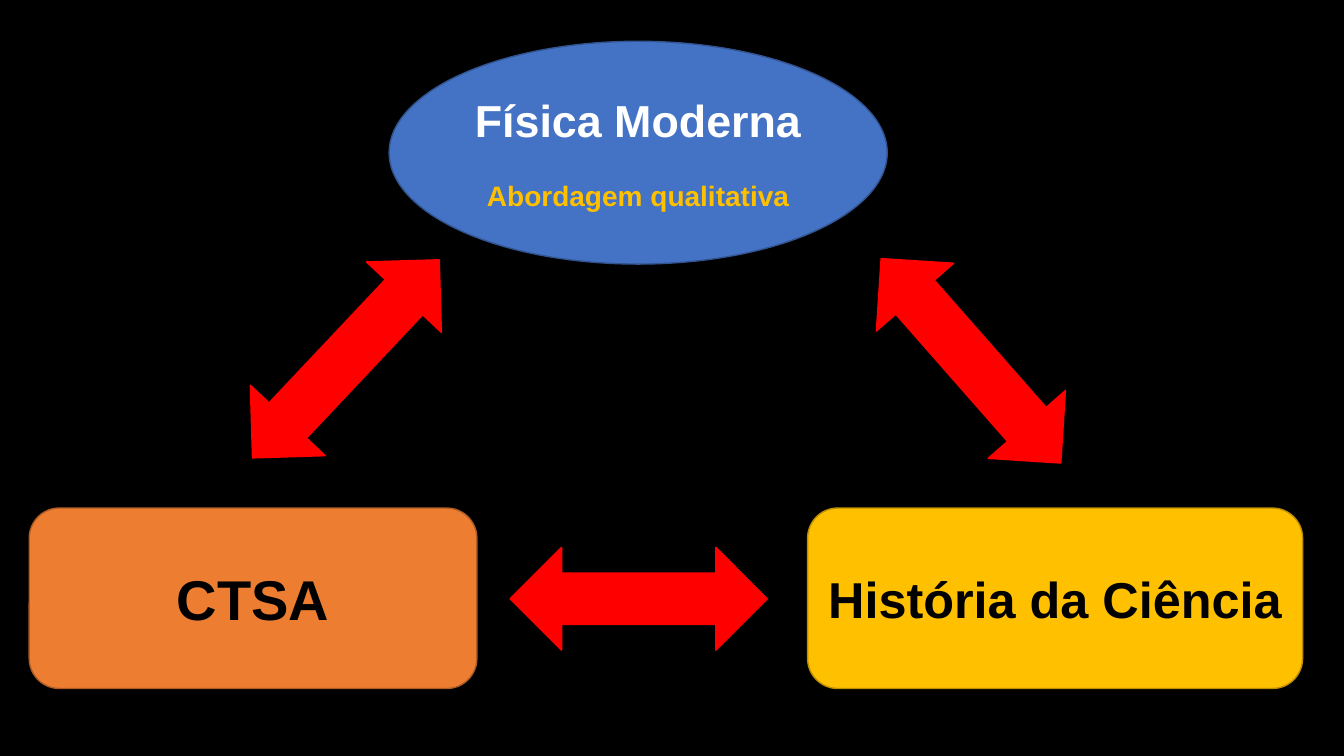
from pptx import Presentation
from pptx import util as u
from pptx.dml.color import RGBColor
from pptx.enum import shapes, text

BLACK = RGBColor(0, 0, 0)
WHITE = RGBColor(255, 255, 255)
BLUE = RGBColor(0x44, 0x72, 0xC4)
NAVY = RGBColor(0x32, 0x54, 0x91)
ORANGE = RGBColor(0xED, 0x7D, 0x31)
RUST = RGBColor(0xAF, 0x5C, 0x24)
GOLD = RGBColor(0xFF, 0xC0, 0)
BRONZE = RGBColor(0xBD, 0x8E, 0)
RED = RGBColor(255, 0, 0)
KIND = shapes.MSO_SHAPE


class Board:
    font = "Arial"

    def __init__(self, deck):
        self.slide = deck.slides.add_slide(deck.slide_layouts[6])
        back = self.slide.background.fill
        back.solid()
        back.fore_color.rgb = BLACK

    def shape(self, kind, box, fill, line):
        item = self.slide.shapes.add_shape(kind, *map(u.Inches, box))
        item.shadow.inherit = False
        item.fill.solid()
        item.fill.fore_color.rgb = fill
        item.line.color.rgb = line
        item.line.width = u.Pt(1)
        return item

    def node(self, kind, box, fill, line, rows):
        frame = self.shape(kind, box, fill, line).text_frame
        frame.word_wrap = True
        frame.vertical_anchor = text.MSO_ANCHOR.MIDDLE
        frame.text = "\n".join(row[0] for row in rows)
        for para, (_, size, color) in zip(frame.paragraphs, rows):
            para.alignment = text.PP_ALIGN.CENTER
            font = para.runs[0].font
            font.name = self.font
            font.size = u.Pt(size)
            font.bold = True
            font.color.rgb = color
        return frame

    def arrow(self, left, top, width, angle):
        box = left, top, width, 1.02
        self.shape(KIND.LEFT_RIGHT_ARROW, box, RED, RED).rotation = angle


def main():
    deck = Presentation()
    deck.slide_width = u.Inches(13.33)
    deck.slide_height = u.Inches(7.5)
    board = Board(deck)

    topic = board.node(KIND.OVAL, (3.86, 0.41, 4.94, 2.21), BLUE, NAVY, [
        ("Física Moderna", 32, WHITE),
        ("Abordagem qualitativa", 20, GOLD),
    ])
    topic.paragraphs[1].space_before = u.Pt(23)

    for left, width, fill, line, label, size in (
        (0.29, 4.44, ORANGE, RUST, "CTSA", 40),
        (8.01, 4.91, GOLD, BRONZE, "História da Ciência", 36),
    ):
        board.node(KIND.ROUNDED_RECTANGLE, (left, 5.04, width, 1.79),
                   fill, line, [(label, size, BLACK)])

    board.arrow(8.28, 3.07, 2.7, 48.7)
    board.arrow(2.08, 3.05, 2.7, 133.3)
    board.arrow(5.06, 5.43, 2.55, 180)
    deck.save("out.pptx")


if __name__ == "__main__":
    main()
